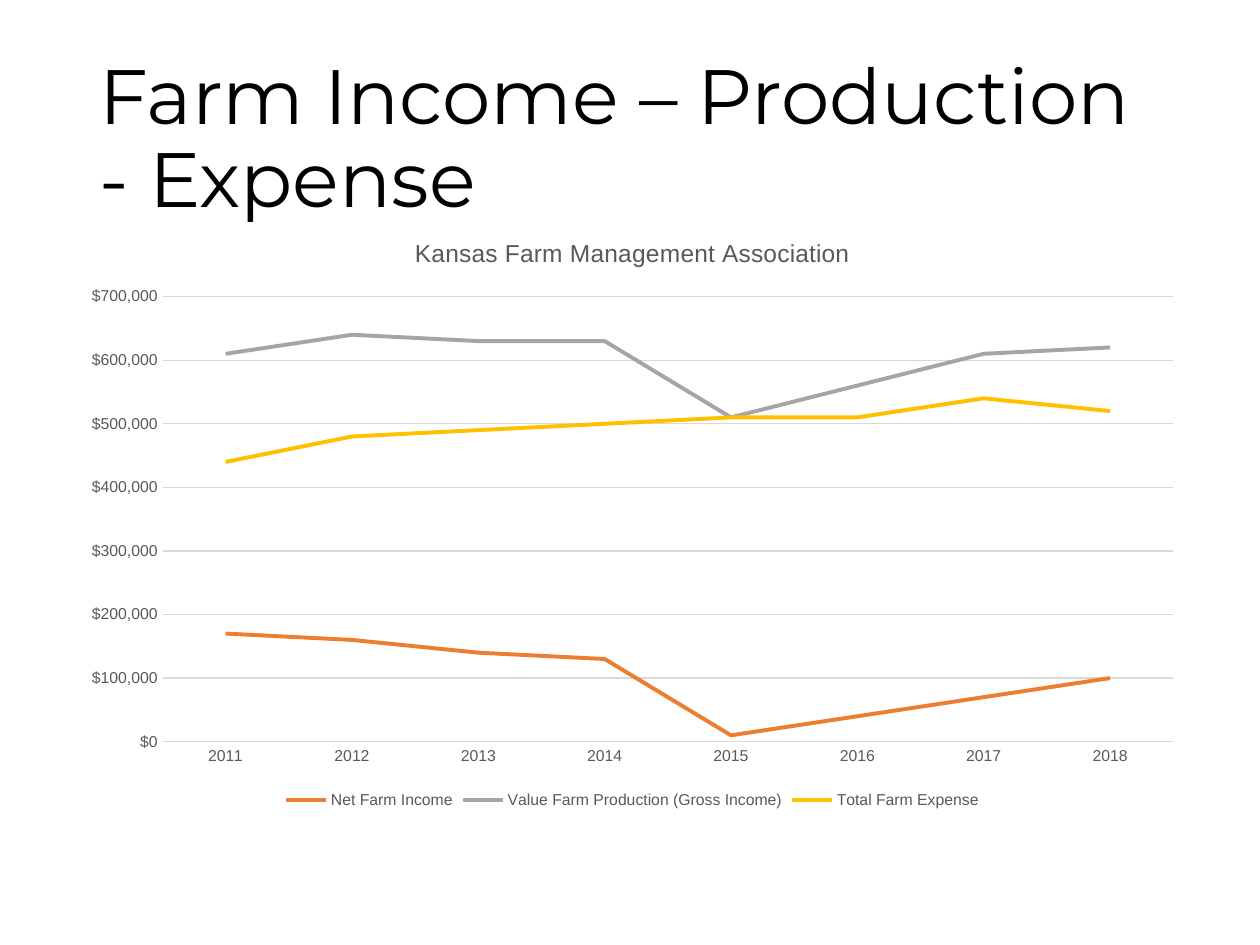
from dataclasses import dataclass

from pptx import Presentation
from pptx import util as u
from pptx.chart.data import CategoryChartData
from pptx.dml.color import RGBColor
from pptx.enum import chart as ch, text


@dataclass(frozen=True)
class Theme:
    """Colours, fonts and type sizes of the slide."""
    black: str = "000000"
    grey: str = "595959"
    rule: str = "D9D9D9"
    title_font: str = "Montserrat"
    chart_font: str = "Arial"
    title_size: int = 44
    heading_size: int = 14
    label_size: int = 9
    rule_width: float = 0.75
    series_width: float = 2.25


THEME = Theme()
WIDTH, HEIGHT = u.Inches(10), u.Inches(7.5)
TITLE_BOX = (0.069, 0.053, 0.862, 0.193)
CHART_BOX = (0.055, 0.227, 0.894, 0.635)
YEARS = [str(year) for year in range(2011, 2019)]
SERIES = [
    ("Net Farm Income", "ED7D31",
     (170000, 160000, 140000, 130000, 10000, 40000, 70000, 100000)),
    ("Value Farm Production (Gross Income)", "A5A5A5",
     (610000, 640000, 630000, 630000, 510000, 560000, 610000, 620000)),
    ("Total Farm Expense", "FFC000",
     (440000, 480000, 490000, 500000, 510000, 510000, 540000, 520000)),
]


def place(box):
    """Turn shares of the slide into left, top, width and height."""
    return [int(share * side) for share, side in zip(box, (WIDTH, HEIGHT) * 2)]


def style_font(font, name, size, color):
    """Set the typeface, size and colour of a font."""
    font.name, font.size, font.bold = name, u.Pt(size), False
    font.color.rgb = RGBColor.from_string(color)


def style_line(line, color, width):
    """Set the colour and width of a line."""
    line.color.rgb = RGBColor.from_string(color)
    line.width = u.Pt(width)


def set_title(slide, words):
    """Fill and format the title placeholder."""
    sp = slide.shapes.title
    sp.left, sp.top, sp.width, sp.height = place(TITLE_BOX)
    tf = sp.text_frame
    tf.text = words
    tf.word_wrap = True
    tf.auto_size = text.MSO_AUTO_SIZE.NONE
    tf.vertical_anchor = text.MSO_ANCHOR.MIDDLE
    p = tf.paragraphs[0]
    p.alignment = text.PP_ALIGN.LEFT
    p.line_spacing = 0.9
    style_font(p.runs[0].font, THEME.title_font, THEME.title_size, THEME.black)


def style_axes(chart):
    """Format the year axis, the dollar axis and its gridlines."""
    years, dollars = chart.category_axis, chart.value_axis
    for axis in (years, dollars):
        axis.major_tick_mark = axis.minor_tick_mark = ch.XL_TICK_MARK.NONE
        style_font(axis.tick_labels.font, THEME.chart_font, THEME.label_size, THEME.grey)
    style_line(years.format.line, THEME.rule, THEME.rule_width)
    dollars.format.line.fill.background()
    dollars.minimum_scale, dollars.maximum_scale = 0, 700000
    dollars.major_unit = 100000
    dollars.tick_labels.number_format = '"$"#,##0'
    dollars.tick_labels.number_format_is_linked = False
    dollars.has_major_gridlines = True
    style_line(dollars.major_gridlines.format.line, THEME.rule, THEME.rule_width)


def add_line_chart(slide, heading):
    """Add the line chart with its heading and legend."""
    data = CategoryChartData()
    data.categories = YEARS
    for name, _, values in SERIES:
        data.add_series(name, values)
    chart = slide.shapes.add_chart(ch.XL_CHART_TYPE.LINE, *place(CHART_BOX), data).chart
    style_font(chart.font, THEME.chart_font, THEME.label_size, THEME.grey)
    chart.has_title = True
    tf = chart.chart_title.text_frame
    tf.text = heading
    style_font(tf.paragraphs[0].runs[0].font, THEME.chart_font, THEME.heading_size, THEME.grey)
    chart.chart_title.include_in_layout = False
    chart.has_legend = True
    chart.legend.position = ch.XL_LEGEND_POSITION.BOTTOM
    chart.legend.include_in_layout = False
    style_font(chart.legend.font, THEME.chart_font, THEME.label_size, THEME.grey)
    style_axes(chart)
    chart.plots[0].vary_by_categories = False
    for series, (_, color, _) in zip(chart.plots[0].series, SERIES):
        series.smooth = False
        series.marker.style = ch.XL_MARKER_STYLE.NONE
        style_line(series.format.line, color, THEME.series_width)


def main():
    """Build and save the slide."""
    prs = Presentation()
    prs.slide_width, prs.slide_height = WIDTH, HEIGHT
    slide = prs.slides.add_slide(prs.slide_layouts.get_by_name("Title Only"))
    set_title(slide, "Farm Income – Production - Expense")
    add_line_chart(slide, "Kansas Farm Management Association")
    prs.save("out.pptx")


if __name__ == "__main__":
    main()
